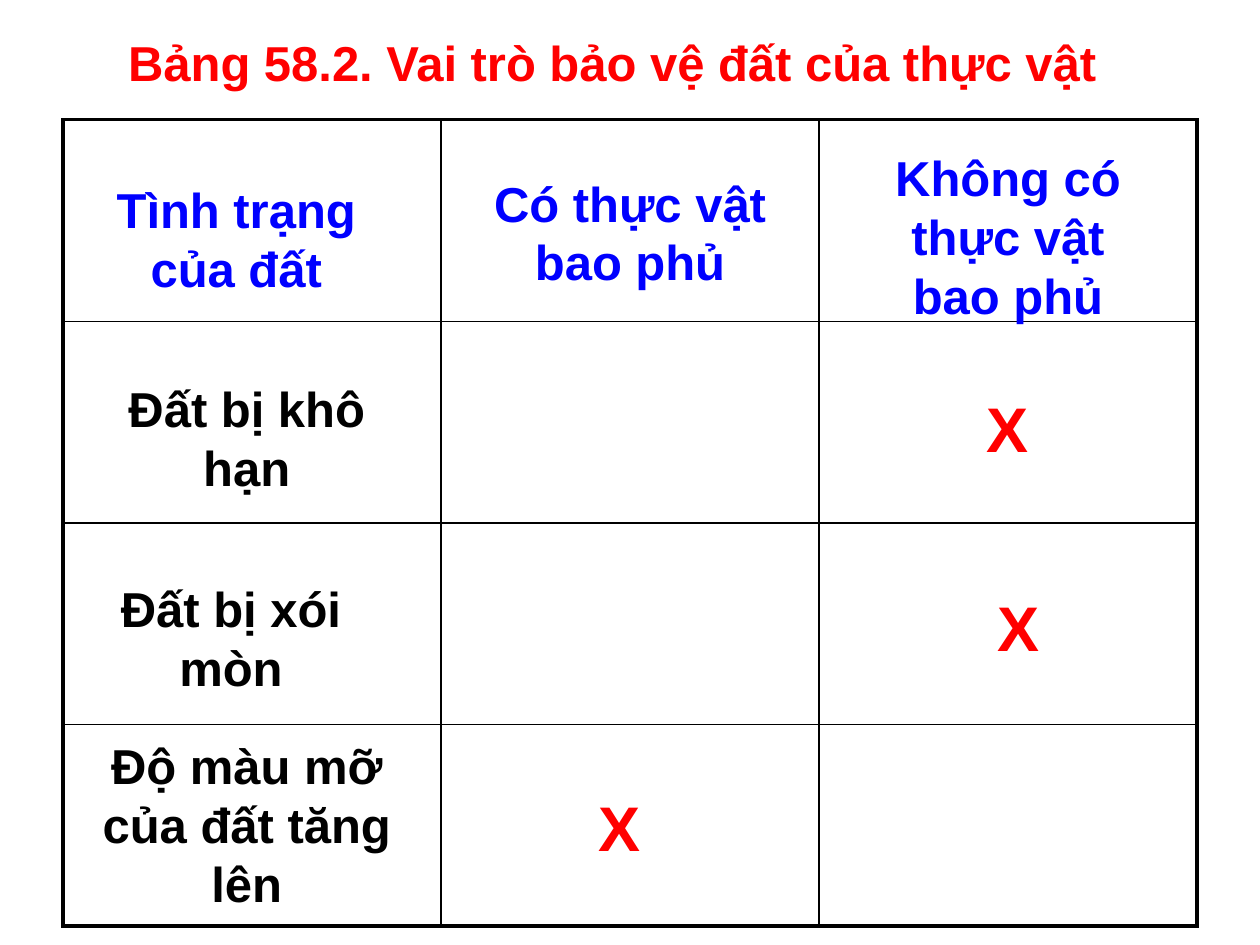
from dataclasses import dataclass

import pptx
import pptx.dml.color
import pptx.enum.text
import pptx.oxml
import pptx.oxml.ns
import pptx.util

UNIT = 1 / 12  # the slide is a grid of 120 by 90 units
RED, BLUE, BLACK = "FF0000", "0000FF", "000000"
COLUMNS, ROWS = 3, 4
COLUMN_WIDTH, ROW_HEIGHT = 3, 1.6
TABLE_LEFT, TABLE_TOP = 0.5, 0.95
OUTER_LINE, INNER_LINE = 2.25, 1


@dataclass(frozen=True)
class Entry:
    """A text over the table: left, top and width are in grid units."""
    text: str
    left: float
    top: float
    width: float
    lines: int
    color: str
    size: int = 28


TITLE = Entry("Bảng 58.2. Vai trò bảo vệ đất của thực vật", 11, 2, 99, 1, RED)
ENTRIES = [
    Entry("Tình trạng của đất", 9, 16, 27, 2, BLUE),
    Entry("Có thực vật bao phủ", 43, 15.4, 34, 2, BLUE),
    Entry("Không có thực vật bao phủ", 81, 13, 30, 3, BLUE),
    Entry("Đất bị khô hạn", 9, 35, 29, 2, BLACK),
    Entry("Đất bị xói mòn", 8, 54, 28, 2, BLACK),
    Entry("Độ màu mỡ của đất tăng lên", 8, 69, 31, 3, BLACK),
    Entry("X", 87, 36, 18, 1, RED, 36),
    Entry("X", 90, 55, 14, 1, RED, 36),
    Entry("X", 51, 74, 16, 1, RED, 36),
]


def rgb(color: str) -> pptx.dml.color.RGBColor:
    return pptx.dml.color.RGBColor.from_string(color)


def entry_box(entry: Entry) -> list[int]:
    height = 0.1 + entry.lines * entry.size * 1.2 / 72
    lengths = (entry.left * UNIT, entry.top * UNIT, entry.width * UNIT, height)
    return [pptx.util.Inches(length) for length in lengths]


def write_text(shape, text: str, *, size: int, color: str, align: str = "CENTER") -> None:
    frame = shape.text_frame
    frame.word_wrap = True
    frame.auto_size = pptx.enum.text.MSO_AUTO_SIZE.SHAPE_TO_FIT_TEXT
    frame.vertical_anchor = pptx.enum.text.MSO_ANCHOR.TOP
    frame.margin_top = pptx.util.Inches(0.09)
    frame.margin_bottom = 0
    paragraph = frame.paragraphs[0]
    paragraph.alignment = pptx.enum.text.PP_ALIGN[align]
    paragraph.space_before = pptx.util.Pt(0)
    run = paragraph.add_run()
    run.text = text
    run.font.name = "Arial"
    run.font.size = pptx.util.Pt(size)
    run.font.bold = True
    run.font.color.rgb = rgb(color)


def add_title(slide, entry: Entry) -> None:
    title = slide.shapes.title
    title.left, title.top, title.width, title.height = entry_box(entry)
    write_text(title, entry.text, size=entry.size, color=entry.color, align="LEFT")


def add_entry(slide, entry: Entry) -> None:
    box = slide.shapes.add_textbox(*entry_box(entry))
    write_text(box, entry.text, size=entry.size, color=entry.color)


def set_border(cell, side: str, width: float) -> None:
    line = pptx.oxml.parse_xml(
        f'<a:{side} {pptx.oxml.ns.nsdecls("a")} w="{pptx.util.Pt(width)}">'
        f'<a:solidFill><a:srgbClr val="{BLACK}"/></a:solidFill></a:{side}>'
    )
    cell._tc.get_or_add_tcPr().append(line)


def add_grid(slide) -> None:
    frame = slide.shapes.add_table(
        ROWS, COLUMNS,
        pptx.util.Inches(TABLE_LEFT), pptx.util.Inches(TABLE_TOP),
        pptx.util.Inches(COLUMNS * COLUMN_WIDTH), pptx.util.Inches(ROWS * ROW_HEIGHT),
    )
    table = frame.table
    table.first_row = table.horz_banding = False
    for row in range(ROWS):
        for column in range(COLUMNS):
            cell = table.cell(row, column)
            on_edge = {
                "lnL": column == 0,
                "lnR": column == COLUMNS - 1,
                "lnT": row == 0,
                "lnB": row == ROWS - 1,
            }
            for side, outer in on_edge.items():
                set_border(cell, side, OUTER_LINE if outer else INNER_LINE)
            cell.fill.background()


def main() -> None:
    presentation = pptx.Presentation()
    presentation.slide_width = pptx.util.Inches(120 * UNIT)
    presentation.slide_height = pptx.util.Inches(90 * UNIT)
    slide = presentation.slides.add_slide(presentation.slide_layouts.get_by_name("Title Only"))
    add_grid(slide)
    add_title(slide, TITLE)
    for entry in ENTRIES:
        add_entry(slide, entry)
    presentation.save("out.pptx")


if __name__ == "__main__":
    main()
